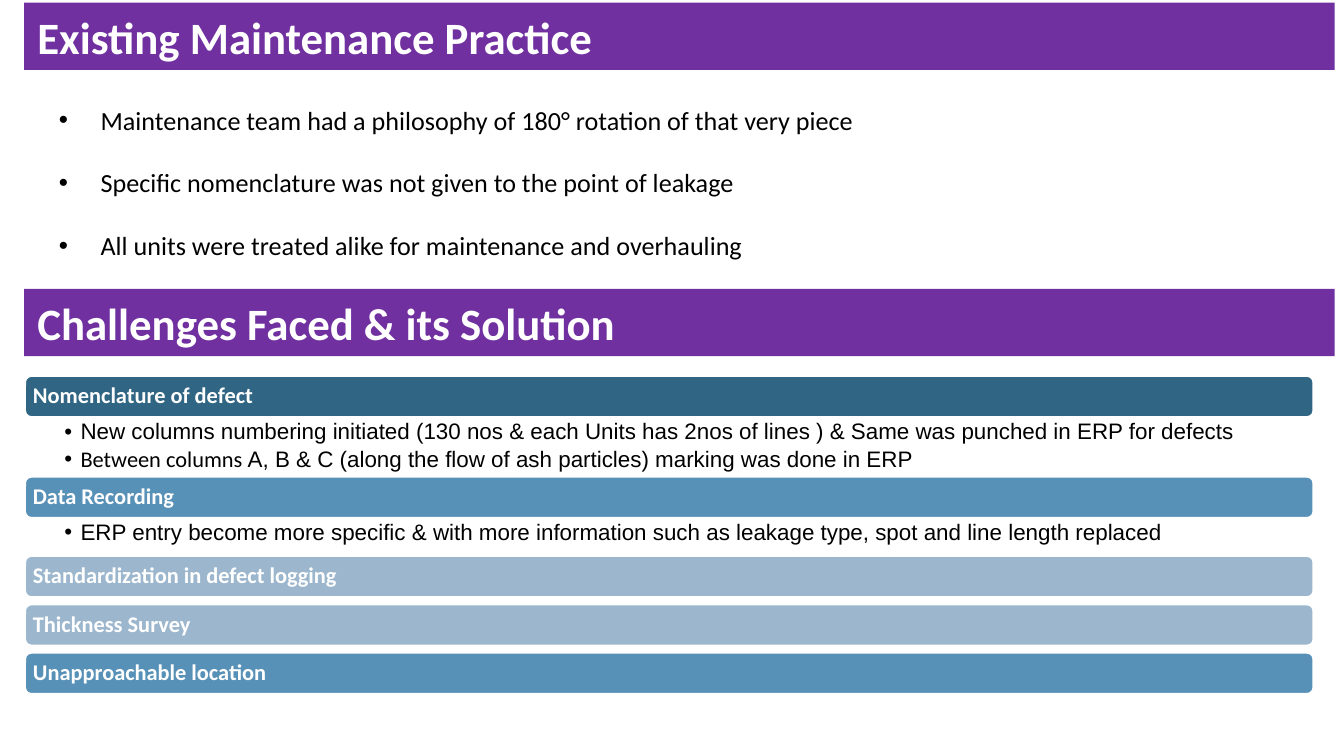
from lxml.etree import SubElement
from pptx import Presentation
from pptx.dml.color import RGBColor
from pptx.enum.shapes import MSO_SHAPE as Shape
from pptx.enum.text import MSO_ANCHOR as Anchor, PP_ALIGN as Align
from pptx.oxml.ns import qn
from pptx.util import Inches, Pt

WHITE = RGBColor(0xFF, 0xFF, 0xFF)
BLACK = RGBColor(0x00, 0x00, 0x00)
PURPLE = RGBColor(0x70, 0x30, 0xA0)
DARK_BLUE = RGBColor(0x30, 0x66, 0x84)
MID_BLUE = RGBColor(0x58, 0x91, 0xB7)
PALE_BLUE = RGBColor(0x9C, 0xB7, 0xCD)

LEFT = 0.18
BAR_WIDTH, BAR_HEIGHT, BAR_GAP = 9.6, 0.32, 0.04

PRACTICES = [
    "Maintenance team had a philosophy of 180° rotation of that very piece",
    "Specific nomenclature was not given to the point of leakage",
    "All units were treated alike for maintenance and overhauling",
]
CHALLENGES = [
    ("Nomenclature of defect", DARK_BLUE, 0.43, [
        [("New columns numbering initiated (130 nos & each Units has 2nos of lines ) "
          "& Same was punched in ERP for defects", None)],
        [("Between columns ", "Calibri"),
         ("A, B & C (along the flow of ash particles) marking was done in ERP", None)],
    ]),
    ("Data Recording", MID_BLUE, 0.27, [
        [("ERP entry become more specific & with more information such as leakage type, "
          "spot and line length replaced", None)],
    ]),
    ("Standardization in defect logging", PALE_BLUE, BAR_GAP, []),
    ("Thickness Survey", PALE_BLUE, BAR_GAP, []),
    ("Unapproachable location", MID_BLUE, BAR_GAP, []),
]


def set_font(font, name, size, color, bold=False):
    """Set the typeface, size, colour and weight of a font."""
    font.name, font.size, font.bold = name, Pt(size), bold
    font.color.rgb = color


def set_bullet(para, indent):
    """Give a paragraph a round bullet with a hanging indent."""
    properties = para._p.get_or_add_pPr()
    properties.set("marL", str(Inches(indent)))
    properties.set("indent", str(-Inches(indent)))
    SubElement(properties, qn("a:buFont"), typeface="Arial")
    SubElement(properties, qn("a:buChar"), char="•")


def add_bar(slide, kind, top, width, height, fill, text, size):
    """Add a filled bar with a bold white heading and return it."""
    bar = slide.shapes.add_shape(
        kind, Inches(LEFT), Inches(top), Inches(width), Inches(height))
    bar.shadow.inherit = False
    bar.fill.solid()
    bar.fill.fore_color.rgb = fill
    para = bar.text_frame.paragraphs[0]
    para.text = text
    para.alignment = Align.LEFT
    set_font(para.font, "Calibri", size, WHITE, bold=True)
    return bar


def add_banner(slide, top, text):
    """Add a purple section banner."""
    banner = add_bar(slide, Shape.RECTANGLE, top, 9.75, 0.5, PURPLE, text, 24)
    banner.line.fill.background()
    banner.text_frame.vertical_anchor = Anchor.TOP


def add_challenge_bar(slide, top, fill, text):
    """Add a rounded challenge heading."""
    bar = add_bar(slide, Shape.ROUNDED_RECTANGLE, top, BAR_WIDTH, BAR_HEIGHT, fill, text, 12)
    bar.line.color.rgb = WHITE
    bar.line.width = Pt(2)
    frame = bar.text_frame
    frame.vertical_anchor = Anchor.MIDDLE
    frame.margin_left = frame.margin_right = Inches(0.05)
    frame.margin_top = frame.margin_bottom = Inches(0.05)
    frame.paragraphs[0].line_spacing = 0.9


def add_bullet_box(slide, left, top, width, height, items):
    """Add a text box with one paragraph per item and return its frame."""
    box = slide.shapes.add_textbox(Inches(left), Inches(top), Inches(width), Inches(height))
    frame = box.text_frame
    frame.word_wrap = True
    for index, spans in enumerate(items):
        para = frame.paragraphs[0] if index == 0 else frame.add_paragraph()
        for text, font_name in spans:
            span = para.add_run()
            span.text = text
            if font_name:
                span.font.name = font_name
    return frame


def add_practices(slide):
    """Add the widely spaced list of existing practices."""
    items = [[(text, None)] for text in PRACTICES]
    frame = add_bullet_box(slide, 0.34, 0.49, 9.03, 1.45, items)
    for para in frame.paragraphs:
        para.alignment = Align.JUSTIFY
        para.line_spacing = 2.0
        set_bullet(para, 0.31)
        set_font(para.font, "Calibri", 14, BLACK)


def add_details(slide, top, height, items):
    """Add the solution bullets below a challenge heading."""
    frame = add_bullet_box(slide, LEFT, top, BAR_WIDTH, height, items)
    frame.margin_left, frame.margin_right = Inches(0.3), Inches(0.09)
    frame.margin_top = frame.margin_bottom = Inches(0.02)
    for para in frame.paragraphs:
        para.level = 1
        para.line_spacing = 0.9
        para.space_after = Pt(2)
        set_bullet(para, 0.12)
        set_font(para.font, "Arial", 12, BLACK)


def add_challenges(slide, top):
    """Stack the challenge headings and their solutions downwards."""
    for heading, fill, space_below, items in CHALLENGES:
        add_challenge_bar(slide, top, fill, heading)
        top += BAR_HEIGHT
        if items:
            add_details(slide, top, space_below, items)
        top += space_below


def main():
    """Build the maintenance slide and save it."""
    deck = Presentation()
    deck.slide_width = Inches(10)
    deck.slide_height = deck.slide_width * 9 // 16
    slide = deck.slides.add_slide(deck.slide_layouts[6])
    add_banner(slide, 0.02, "Existing Maintenance Practice")
    add_practices(slide)
    add_banner(slide, 2.15, "Challenges Faced & its Solution")
    add_challenges(slide, 2.79)
    deck.save("out.pptx")


if __name__ == "__main__":
    main()
